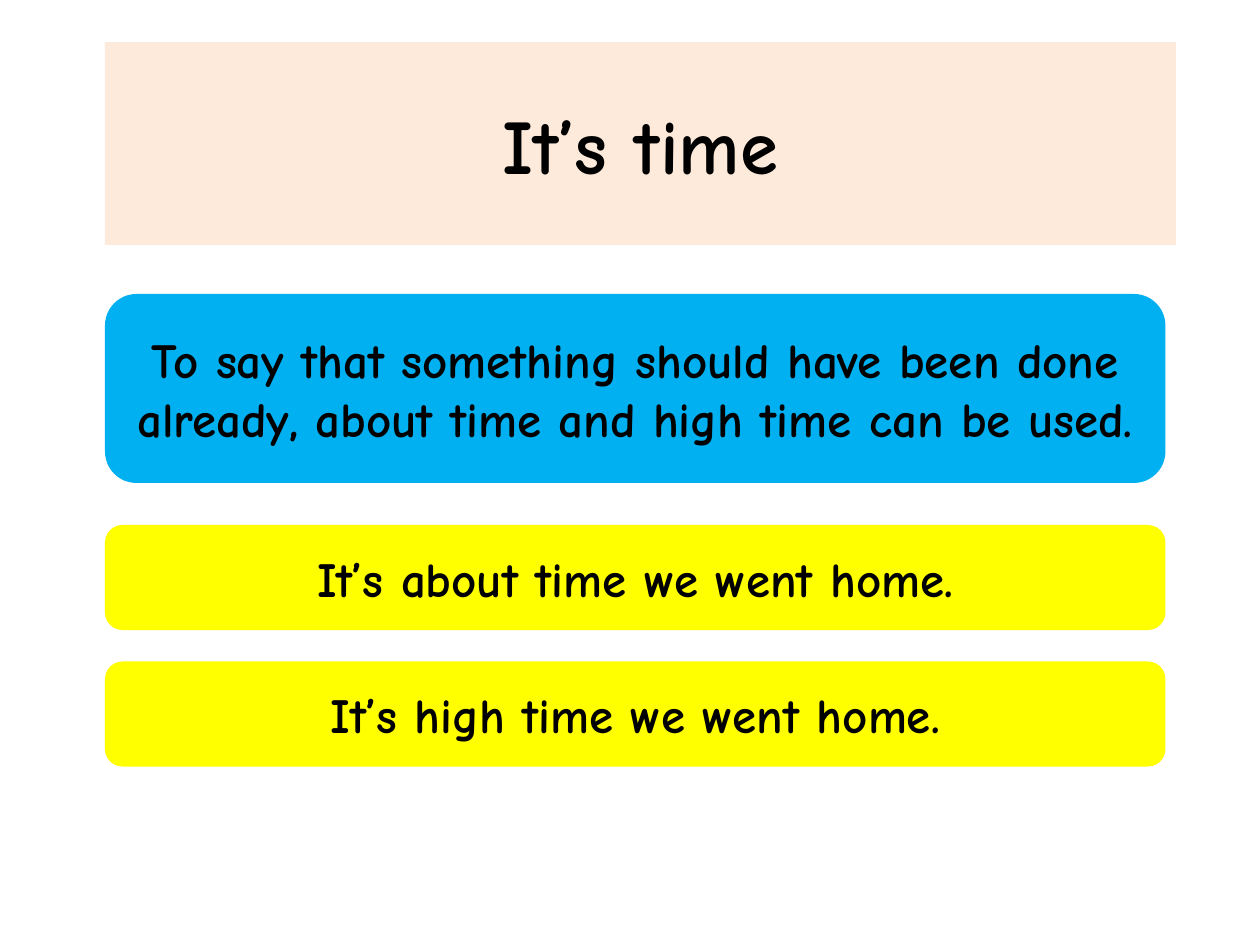
"""Build a grammar slide on "It's time" with a rule and two examples."""
import pptx
import pptx.dml.color
import pptx.enum.shapes
import pptx.enum.text
import pptx.util

Pt = pptx.util.Pt
RGB = pptx.dml.color.RGBColor
SHAPE = pptx.enum.shapes.MSO_SHAPE
COLORS = {"title": "FDEADA", "rule": "00B0F0", "example": "FFFF00", "text": "000000"}
LEFT = 60

prs = pptx.Presentation()
prs.slide_width, prs.slide_height = Pt(720), Pt(540)
s = prs.slides.add_slide(prs.slide_layouts[6])

boxes = [
    ("title", SHAPE.RECTANGLE, 24, 612, 115.9, 44, "It’s time"),
    ("rule", SHAPE.ROUNDED_RECTANGLE, 168, 606, 108, 28,
     "To say that something should have been done already, "
     "about time and high time can be used."),
    ("example", SHAPE.ROUNDED_RECTANGLE, 300, 606, 60, 28, "It’s about time we went home."),
    ("example", SHAPE.ROUNDED_RECTANGLE, 378, 606, 60, 28, "It’s high time we went home."),
]

for role, kind, top, width, height, size, text in boxes:
    sp = s.shapes.add_shape(kind, Pt(LEFT), Pt(top), Pt(width), Pt(height))
    sp.shadow.inherit = False
    sp.fill.solid()
    sp.fill.fore_color.rgb = RGB.from_string(COLORS[role])
    sp.line.fill.background()
    tf = sp.text_frame
    tf.word_wrap = True
    tf.vertical_anchor = pptx.enum.text.MSO_ANCHOR.MIDDLE
    tf.text = text
    p = tf.paragraphs[0]
    p.alignment = pptx.enum.text.PP_ALIGN.CENTER
    r = p.runs[0]
    r.font.name = "Comic Neue"
    r.font.size = Pt(size)
    r.font.bold = True
    r.font.color.rgb = RGB.from_string(COLORS["text"])

prs.save("out.pptx")
